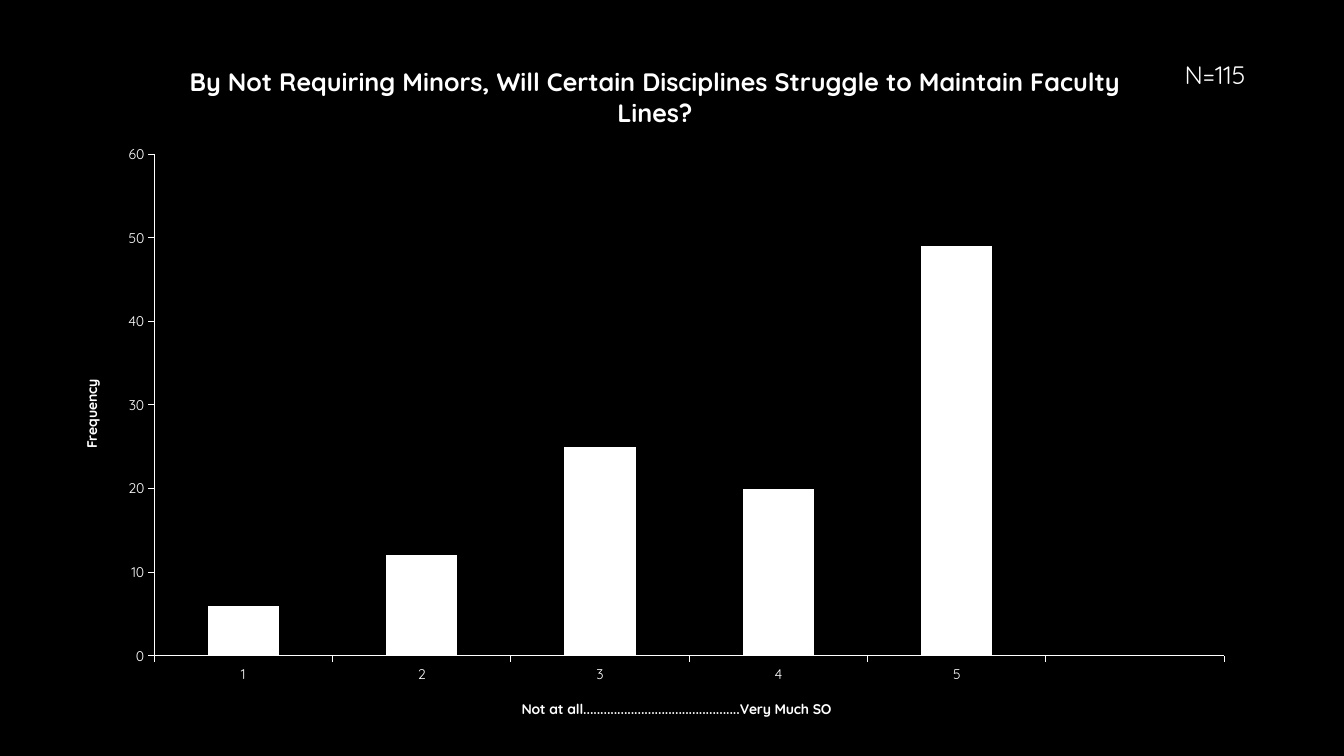
from lxml import etree
from pptx import Presentation
from pptx.chart.data import CategoryChartData
from pptx.dml.color import RGBColor
from pptx.enum.chart import XL_CHART_TYPE, XL_TICK_MARK
from pptx.enum.text import MSO_AUTO_SIZE
from pptx.oxml.ns import qn
from pptx.util import Inches, Pt

COLUMN = XL_CHART_TYPE.COLUMN_CLUSTERED
OUTSIDE, NO_TICK = XL_TICK_MARK.OUTSIDE, XL_TICK_MARK.NONE
BLACK = RGBColor(0x00, 0x00, 0x00)
WHITE = RGBColor(0xFF, 0xFF, 0xFF)
FONT = "Quicksand"


def add_run(p, text, size, bold=False):
    r = p.add_run()
    r.text = text
    r.font.name = FONT
    r.font.size = Pt(size)
    r.font.bold = bold
    r.font.color.rgb = WHITE


prs = Presentation()
prs.slide_width, prs.slide_height = Inches(13.33), Inches(7.5)
s = prs.slides.add_slide(prs.slide_layouts[6])
s.background.fill.solid()
s.background.fill.fore_color.rgb = BLACK

# Chart of answers
data = CategoryChartData()
data.categories = ["1", "2", "3", "4", "5", ""]
data.add_series("Series 1", [6, 12, 25, 20, 49, None])
chart = s.shapes.add_chart(COLUMN, Inches(0.61), Inches(0.39),
                           Inches(11.77), Inches(6.95), data).chart
chart.has_legend = False
chart.font.name = FONT
chart.font.size = Pt(10)
chart.font.color.rgb = WHITE
chart.has_title = True
add_run(chart.chart_title.text_frame.paragraphs[0],
        "By Not Requiring Minors, Will Certain Disciplines Struggle "
        "to Maintain Faculty Lines?", 18, True)

plot = chart.plots[0]
plot.gap_width = 150
plot.vary_by_categories = False
fill = plot.series[0].format.fill
fill.solid()
fill.fore_color.rgb = WHITE

# Axes
axis_titles = [
    (chart.category_axis, "Not at all" + "." * 46 + "Very Much SO"),
    (chart.value_axis, "Frequency"),
]
for axis, title in axis_titles:
    axis.has_major_gridlines = False
    axis.major_tick_mark = OUTSIDE
    axis.minor_tick_mark = NO_TICK
    axis.format.line.color.rgb = WHITE
    axis.format.line.width = Pt(0.75)
    add_run(axis.axis_title.text_frame.paragraphs[0], title, 10, True)
chart.value_axis.minimum_scale = 0
chart.value_axis.maximum_scale = 60
chart.value_axis.major_unit = 10

# Inner plot area, as fractions of the chart
plot_area = plot._element.getparent()
for old in plot_area.findall(qn("c:layout")):
    plot_area.remove(old)
layout = etree.Element(qn("c:layout"))
plot_area.insert(0, layout)
manual = etree.SubElement(layout, qn("c:manualLayout"))
for tag, val in [("layoutTarget", "inner"), ("xMode", "edge"), ("yMode", "edge"),
                 ("x", "0.078"), ("y", "0.164"), ("w", "0.902"), ("h", "0.716")]:
    etree.SubElement(manual, qn("c:" + tag)).set("val", val)

# Sample size
tf = s.shapes.add_textbox(Inches(11.65), Inches(0.54), Inches(0.96), Inches(0.4)).text_frame
tf.word_wrap = False
tf.auto_size = MSO_AUTO_SIZE.SHAPE_TO_FIT_TEXT
add_run(tf.paragraphs[0], "N=115", 18)

prs.save("out.pptx")
